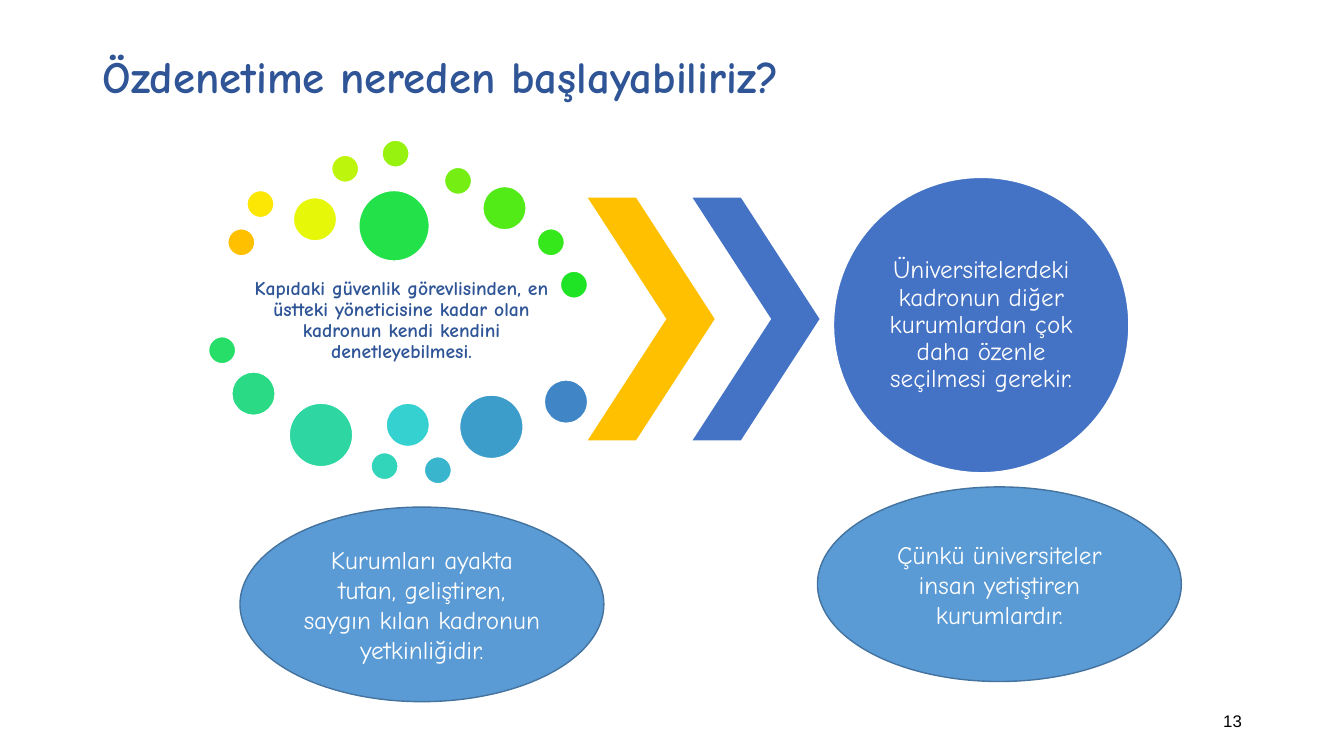
from dataclasses import dataclass
from typing import Optional

from pptx import Presentation
from pptx.dml.color import RGBColor
from pptx.enum.shapes import MSO_SHAPE
from pptx.enum.text import MSO_ANCHOR, PP_ALIGN
from pptx.util import Pt

OVAL, CHEVRON = MSO_SHAPE.OVAL, MSO_SHAPE.CHEVRON
TOP, MIDDLE = MSO_ANCHOR.TOP, MSO_ANCHOR.MIDDLE
LEFT, CENTER, RIGHT = PP_ALIGN.LEFT, PP_ALIGN.CENTER, PP_ALIGN.RIGHT


@dataclass(frozen=True)
class Theme:
    font: str = "Comic Neue"
    number_font: str = "Arial"
    navy: str = "2F5597"
    blue: str = "4472C4"
    sky: str = "5B9BD5"
    sky_edge: str = "43739E"
    amber: str = "FFC000"
    white: str = "FFFFFF"
    black: str = "000000"
    title_size: float = 32
    body_size: float = 18
    cloud_size: float = 14
    number_size: float = 12


THEME = Theme()


@dataclass(frozen=True)
class Box:
    left: float
    top: float
    width: float
    height: float

    def lengths(self) -> tuple:
        return Pt(self.left), Pt(self.top), Pt(self.width), Pt(self.height)


@dataclass(frozen=True)
class TextStyle:
    size: float
    color: str
    font: str = THEME.font
    bold: bool = False
    align: PP_ALIGN = CENTER
    spacing: float = 1.0
    anchor: MSO_ANCHOR = MIDDLE
    side_inset: float = 7.2
    top_inset: float = 3.6


@dataclass(frozen=True)
class Dot:
    left: float
    top: float
    size: float
    color: str


@dataclass(frozen=True)
class Statement:
    box: Box
    text: str


SMALL, MEDIUM, LARGE, HUGE = 19.4, 31, 45.4, 50.4
DOTS = [
    Dot(162.7, 163.4, SMALL, "FFC000"),
    Dot(176.4, 136.1, SMALL, "FCE604"),
    Dot(209.5, 141.1, MEDIUM, "E6F808"),
    Dot(236.9, 110.9, SMALL, "BEF50C"),
    Dot(272.9, 100.1, SMALL, "98F20F"),
    Dot(317.5, 119.5, SMALL, "75EE13"),
    Dot(344.9, 133.2, MEDIUM, "53EB17"),
    Dot(383.8, 163.4, SMALL, "34E81B"),
    Dot(400.3, 193.7, SMALL, "1FE426"),
    Dot(256.3, 136.1, HUGE, "23E148"),
    Dot(149, 240.5, SMALL, "26DE68"),
    Dot(165.6, 265.7, MEDIUM, "2ADA85"),
    Dot(206.6, 288, LARGE, "2ED7A1"),
    Dot(265, 323.3, SMALL, "32D4BA"),
    Dot(275.8, 288, MEDIUM, "35D1D1"),
    Dot(303.1, 326.2, SMALL, "39B6CE"),
    Dot(328.3, 282.2, LARGE, "3D9DCA"),
    Dot(388.8, 271.4, MEDIUM, "4086C7"),
]
STATEMENTS = [
    Statement(Box(171.4, 362.2, 259.9, 139),
              "Kurumları ayakta tutan, geliştiren, saygın kılan kadronun yetkinliğidir."),
    Statement(Box(583.9, 347.8, 259.9, 139),
              "Çünkü üniversiteler insan yetiştiren kurumlardır."),
]

TITLE_STYLE = TextStyle(THEME.title_size, THEME.navy, bold=True, align=LEFT,
                        spacing=0.9, anchor=TOP, top_inset=10)
CLOUD_STYLE = TextStyle(THEME.cloud_size, THEME.navy, bold=True, spacing=0.9,
                        side_inset=1.4, top_inset=1.4)
CIRCLE_STYLE = TextStyle(THEME.body_size, THEME.white, spacing=0.9,
                         side_inset=0, top_inset=0)
STATEMENT_STYLE = TextStyle(THEME.body_size, THEME.white)
NUMBER_STYLE = TextStyle(THEME.number_size, THEME.black, font=THEME.number_font, align=RIGHT)


def write_text(shape, text: str, style: TextStyle) -> None:
    frame = shape.text_frame
    frame.text = text
    frame.word_wrap = True
    frame.vertical_anchor = style.anchor
    frame.margin_left = frame.margin_right = Pt(style.side_inset)
    frame.margin_top = frame.margin_bottom = Pt(style.top_inset)
    for para in frame.paragraphs:
        para.alignment = style.align
        para.line_spacing = style.spacing
        for span in para.runs:
            span.font.name = style.font
            span.font.size = Pt(style.size)
            span.font.bold = style.bold
            span.font.color.rgb = RGBColor.from_string(style.color)


def add_text(page, box: Box, text: str, style: TextStyle) -> None:
    write_text(page.shapes.add_textbox(*box.lengths()), text, style)


def add_figure(page, kind: MSO_SHAPE, box: Box, fill: str, edge: Optional[str] = None):
    figure = page.shapes.add_shape(kind, *box.lengths())
    figure.shadow.inherit = False
    figure.fill.solid()
    figure.fill.fore_color.rgb = RGBColor.from_string(fill)
    if edge is None:
        figure.line.fill.background()
    else:
        figure.line.color.rgb = RGBColor.from_string(edge)
        figure.line.width = Pt(1)
    return figure


def main() -> None:
    deck = Presentation()
    deck.slide_width, deck.slide_height = Pt(960), Pt(540)
    page = deck.slides.add_slide(deck.slide_layouts[5])

    # Title and page number
    title = page.shapes.title
    title.left, title.top, title.width, title.height = Box(66.2, 28.8, 828, 104.4).lengths()
    write_text(title, "Özdenetime nereden başlayabiliriz?", TITLE_STYLE)
    add_text(page, Box(678.2, 500.4, 216, 28.8), "13", NUMBER_STYLE)

    # Cloud of dots around its text
    add_text(page, Box(174.2, 183.6, 225.4, 90.7),
             "Kapıdaki güvenlik görevlisinden, en üstteki yöneticisine kadar olan "
             "kadronun kendi kendini denetleyebilmesi.", CLOUD_STYLE)
    for dot in DOTS:
        add_figure(page, OVAL, Box(dot.left, dot.top, dot.size, dot.size),
                   dot.color, THEME.white)

    # Chevrons leading to the circle
    for index, color in enumerate((THEME.amber, THEME.blue)):
        chevron = add_figure(page, CHEVRON, Box(419.8 + 74.9 * index, 141.1, 90.7, 173.5), color)
        chevron.adjustments[0] = 0.62
    circle = add_figure(page, OVAL, Box(595.4, 126.7, 211, 211), THEME.blue, THEME.white)
    write_text(circle, "Üniversitelerdeki\nkadronun diğer kurumlardan çok daha özenle "
                       "seçilmesi gerekir.", CIRCLE_STYLE)

    # Statements below
    for statement in STATEMENTS:
        oval = add_figure(page, OVAL, statement.box, THEME.sky, THEME.sky_edge)
        write_text(oval, statement.text, STATEMENT_STYLE)

    deck.save("out.pptx")


if __name__ == "__main__":
    main()
